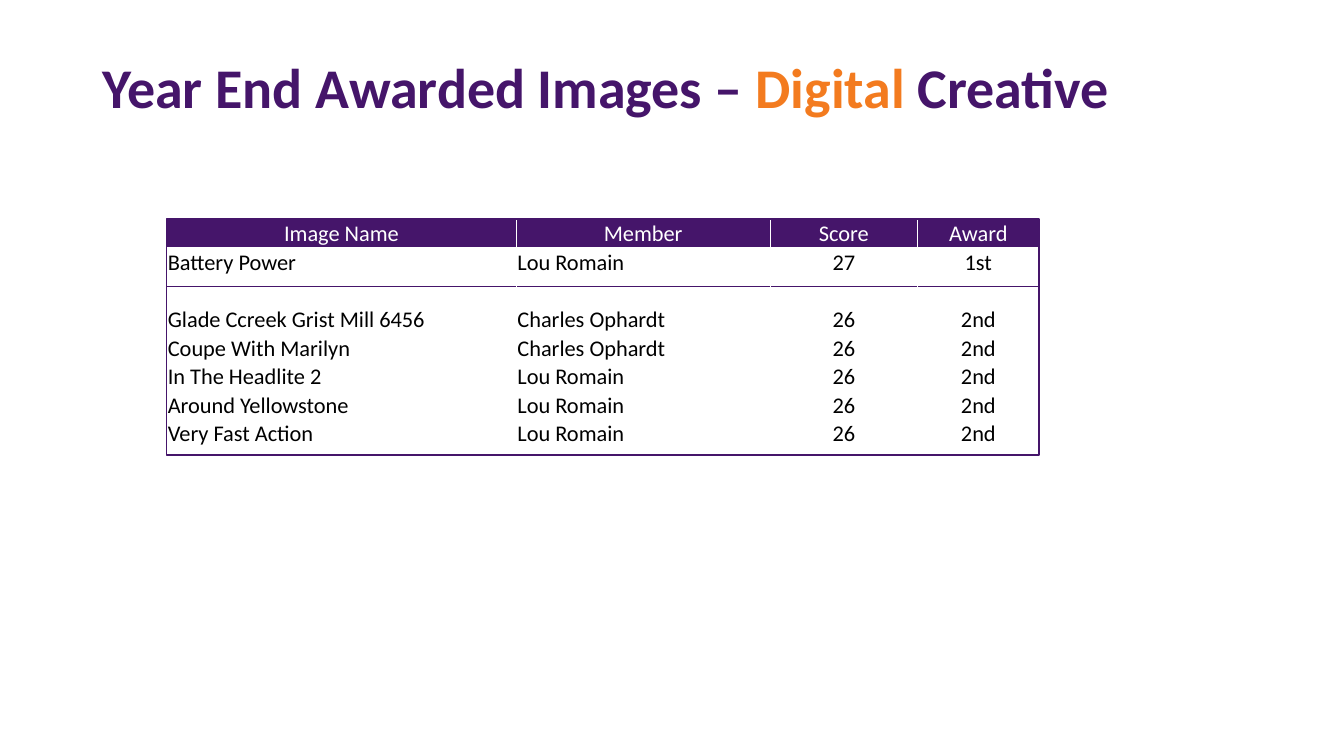
from lxml import etree
from pptx import Presentation
from pptx import util as u
from pptx.dml.color import RGBColor
from pptx.enum import shapes, text
from pptx.oxml.ns import qn

FONT = "Calibri"
PURPLE, ORANGE, WHITE, BLACK = "45156A", "F37B1F", "FFFFFF", "000000"
COLUMN_WIDTHS = (8.81, 6.4, 3.71, 3.07)
ROW_HEIGHT = 0.72
AWARDS = (
    ("Image Name", "Member", "Score", "Award"),
    ("Battery Power", "Lou Romain", "27", "1st"),
    ("", "", "", ""),
    ("Glade Ccreek Grist Mill 6456", "Charles Ophardt", "26", "2nd"),
    ("Coupe With Marilyn", "Charles Ophardt", "26", "2nd"),
    ("In The Headlite 2", "Lou Romain", "26", "2nd"),
    ("Around Yellowstone", "Lou Romain", "26", "2nd"),
    ("Very Fast Action", "Lou Romain", "26", "2nd"),
)


def color(value):
    return RGBColor.from_string(value)


def format_span(span, size, value, bold=False):
    span.font.name = FONT
    span.font.size = u.Pt(size)
    span.font.bold = bold
    span.font.color.rgb = color(value)


def add_title(page, left, top, width, height):
    title = page.shapes.title
    title.left, title.top = u.Cm(left), u.Cm(top)
    title.width, title.height = u.Cm(width), u.Cm(height)
    frame = title.text_frame
    frame.auto_size = text.MSO_AUTO_SIZE.NONE
    frame.vertical_anchor = text.MSO_ANCHOR.MIDDLE
    para = frame.paragraphs[0]
    para.alignment = text.PP_ALIGN.LEFT
    para.line_spacing = 0.9
    for words, value in (("Year End Awarded Images – ", PURPLE),
                         ("Digital", ORANGE), (" Creative", PURPLE)):
        span = para.add_run()
        span.text = words
        format_span(span, 40, value, bold=True)


def add_borders(cell):
    properties = cell._tc.get_or_add_tcPr()
    for side in ("a:lnL", "a:lnR", "a:lnT", "a:lnB"):
        line = etree.SubElement(properties, qn(side), w=str(u.Pt(1)))
        fill = etree.SubElement(line, qn("a:solidFill"))
        etree.SubElement(fill, qn("a:srgbClr"), val=WHITE)


def fill_cell(cell, words, is_header, centered):
    add_borders(cell)
    cell.margin_left = cell.margin_right = cell.margin_top = u.Cm(0.03)
    cell.margin_bottom = 0
    cell.vertical_anchor = text.MSO_ANCHOR.BOTTOM
    if is_header:
        cell.fill.solid()
        cell.fill.fore_color.rgb = color(PURPLE)
    else:
        cell.fill.background()
    para = cell.text_frame.paragraphs[0]
    para.alignment = text.PP_ALIGN.CENTER if centered else text.PP_ALIGN.LEFT
    if words:
        para.text = words
        format_span(para.runs[0], 16, WHITE if is_header else BLACK)
    else:
        ending = etree.SubElement(para._p, qn("a:endParaRPr"), sz="1600")
        etree.SubElement(ending, qn("a:latin"), typeface=FONT)


def add_divider(page, left, top, width):
    divider = page.shapes.add_connector(
        shapes.MSO_CONNECTOR.STRAIGHT,
        u.Cm(left), u.Cm(top), u.Cm(left + width), u.Cm(top))
    divider.line.color.rgb = color(PURPLE)
    divider.line.width = u.Pt(1)
    etree.SubElement(divider._element.spPr, qn("a:effectLst"))


def add_table(page, left, top, width):
    table = page.shapes.add_table(
        len(AWARDS), len(COLUMN_WIDTHS), u.Cm(left), u.Cm(top),
        u.Cm(width), u.Cm(ROW_HEIGHT * len(AWARDS))).table
    table.horz_banding = False
    table.first_row = False
    for column, column_width in zip(table.columns, COLUMN_WIDTHS):
        column.width = u.Cm(column_width)
    for row_index, entries in enumerate(AWARDS):
        table.rows[row_index].height = u.Cm(ROW_HEIGHT)
        for column_index, words in enumerate(entries):
            is_header = row_index == 0
            fill_cell(table.cell(row_index, column_index), words,
                      is_header, is_header or column_index > 1)


def add_frame(page, left, top, width, height):
    box = page.shapes.add_shape(
        shapes.MSO_SHAPE.RECTANGLE,
        u.Cm(left), u.Cm(top), u.Cm(width), u.Cm(height))
    box.shadow.inherit = False
    box.fill.background()
    box.line.color.rgb = color(PURPLE)
    box.line.width = u.Pt(1)


def add_awards(page, left, top, width, height):
    add_divider(page, left, top + 1.7, width)
    add_table(page, left, top, width)
    add_frame(page, left, top, width, height)


def main():
    deck = Presentation()
    deck.slide_width, deck.slide_height = u.Cm(33.87), u.Cm(19.05)
    page = deck.slides.add_slide(deck.slide_layouts[5])
    add_title(page, 2.33, 1.01, 29.21, 2.51)
    add_awards(page, 4.2, 5.52, sum(COLUMN_WIDTHS), 5.95)
    deck.save("out.pptx")


if __name__ == "__main__":
    main()
